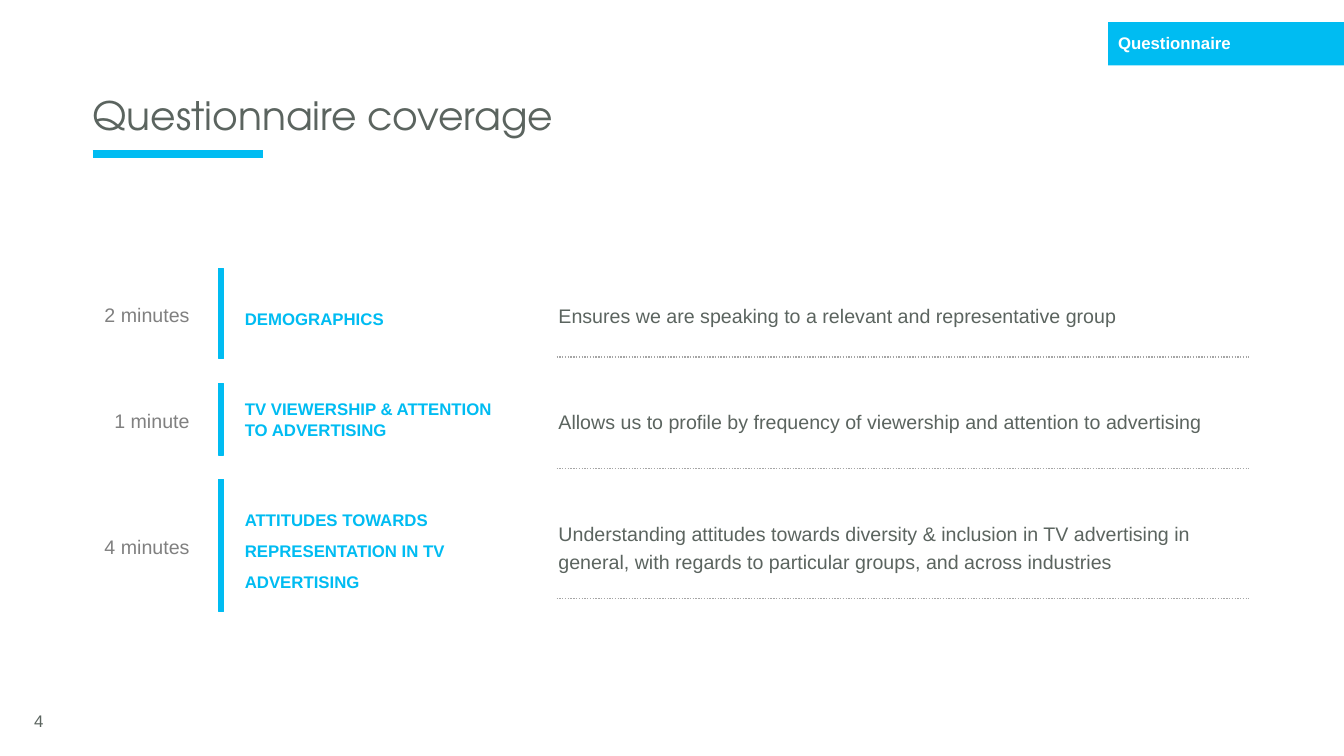
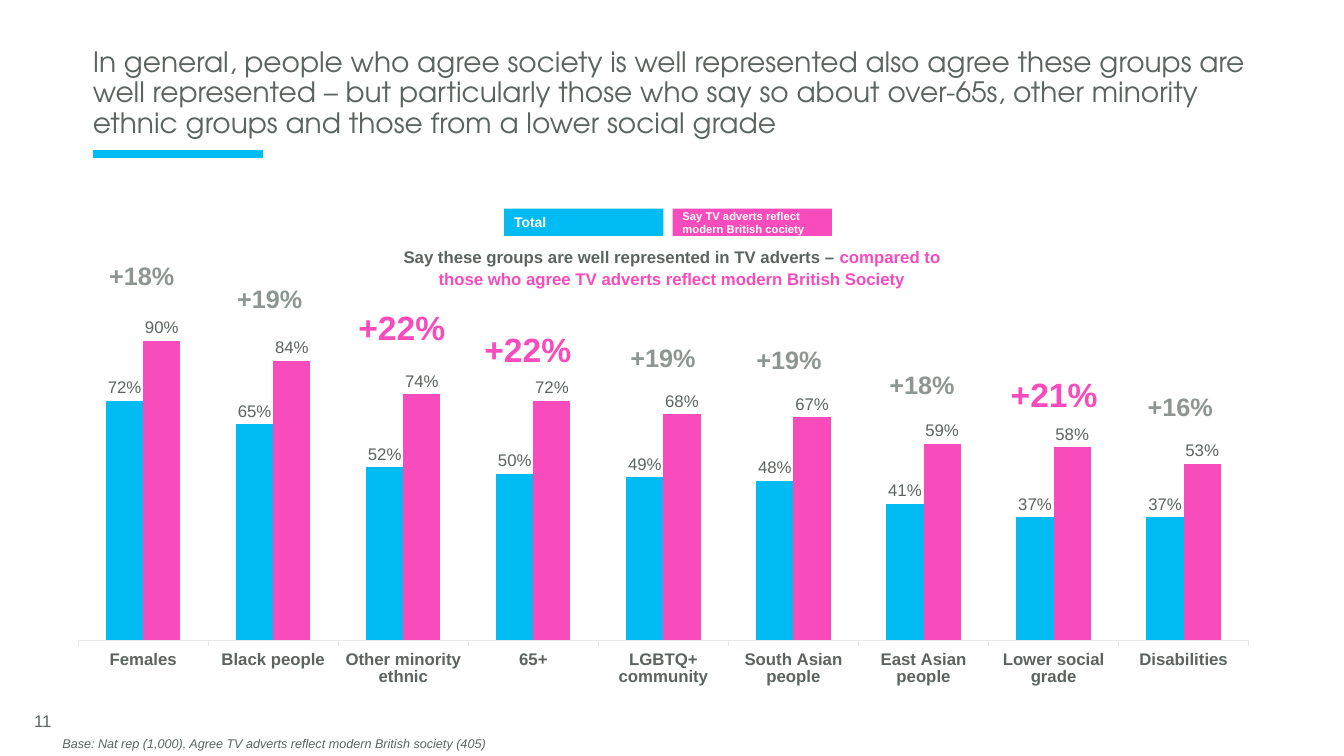
from lxml import etree
from pptx import Presentation
from pptx.chart.data import CategoryChartData
from pptx.dml.color import RGBColor
from pptx.enum.chart import XL_CHART_TYPE, XL_LABEL_POSITION, XL_TICK_LABEL_POSITION, XL_TICK_MARK
from pptx.enum.dml import MSO_LINE
from pptx.enum.shapes import MSO_CONNECTOR, MSO_SHAPE
from pptx.enum.text import MSO_ANCHOR, MSO_AUTO_SIZE, PP_ALIGN
from pptx.oxml.ns import qn
from pptx.util import Inches, Pt

RECTANGLE = MSO_SHAPE.RECTANGLE
STRAIGHT = MSO_CONNECTOR.STRAIGHT
DOTTED = MSO_LINE.ROUND_DOT
LEFT, CENTER, RIGHT = PP_ALIGN.LEFT, PP_ALIGN.CENTER, PP_ALIGN.RIGHT
MIDDLE, BOTTOM = MSO_ANCHOR.MIDDLE, MSO_ANCHOR.BOTTOM
NO_FIT = MSO_AUTO_SIZE.NONE
CLUSTERED = XL_CHART_TYPE.COLUMN_CLUSTERED
OUTSIDE_END = XL_LABEL_POSITION.OUTSIDE_END
LOW = XL_TICK_LABEL_POSITION.LOW
TICK_OUTSIDE = XL_TICK_MARK.OUTSIDE

BLUE, PINK, WHITE = "00BCF2", "F84CBC", "FFFFFF"
TEXT, TIME_GRAY, RULE_GRAY, DELTA_GRAY, AXIS_GRAY = "5B645F", "808080", "A6A6A6", "8D9691", "E6E8E7"
TITLE_FONT, BODY_FONT = "TeX Gyre Adventor", "Arial"


def color(value):
    return RGBColor.from_string(value)


def add_text(page, area, spans, size, bold=False, italic=False, align=LEFT, spacing=None, fill=None):
    area = [Inches(length) for length in area]
    if fill:
        box = page.shapes.add_shape(RECTANGLE, *area)
        box.shadow.inherit = False
        box.fill.solid()
        box.fill.fore_color.rgb = color(fill)
        box.line.fill.background()
    else:
        box = page.shapes.add_textbox(*area)
    frame = box.text_frame
    frame.word_wrap = True
    frame.vertical_anchor = MIDDLE
    para = frame.paragraphs[0]
    para.alignment = align
    para.line_spacing = spacing
    for words, tint in spans:
        span = para.add_run()
        span.text = words
        span.font.name = BODY_FONT
        span.font.size = Pt(size)
        span.font.bold = bold
        span.font.italic = italic
        span.font.color.rgb = color(tint)


deck = Presentation()
deck.slide_width, deck.slide_height = Inches(13.33), Inches(7.5)

titles = [
    ("Questionnaire coverage", 28, "4"),
    ("In general, people who agree society is well represented also agree these groups are "
     "well represented – but particularly those who say so about over-65s, other minority "
     "ethnic groups and those from a lower social grade", 20, "11"),
]
pages = []
rules = []
for heading, size, number in titles:
    page = deck.slides.add_slide(deck.slide_layouts[5])
    pages.append(page)
    title = page.shapes.title
    title.left, title.top = Inches(0.92), Inches(0.4)
    title.width, title.height = Inches(11.5), Inches(1.03)
    frame = title.text_frame
    frame.text = heading
    frame.word_wrap = True
    frame.auto_size = NO_FIT
    frame.vertical_anchor = BOTTOM
    frame.margin_left = frame.margin_right = 0
    para = frame.paragraphs[0]
    para.alignment = LEFT
    para.line_spacing = 0.9
    font = para.runs[0].font
    font.name, font.size = TITLE_FONT, Pt(size)
    font.color.rgb = color(TEXT)
    underline = page.shapes.add_connector(STRAIGHT, Inches(0.92), Inches(1.53), Inches(2.61), Inches(1.53))
    underline.line.color.rgb = color(BLUE)
    underline.line.width = Pt(6)
    rules.append(underline)
    add_text(page, (0.24, 6.95, 4.5, 0.4), [(number, TEXT)], 12)

coverage, comparison = pages

add_text(coverage, (10.99, 0.22, 2.35, 0.43), [("Questionnaire", WHITE)], 12, bold=True, spacing=0.9, fill=BLUE)

sections = [
    ("2 minutes", "DEMOGRAPHICS", Pt(22.1),
     "Ensures we are speaking to a relevant and representative group", 3.11, 0.89, 3.54),
    ("1 minute", "TV VIEWERSHIP & ATTENTION TO ADVERTISING", None,
     "Allows us to profile by frequency of viewership and attention to advertising", 4.16, 0.71, 4.65),
    ("4 minutes", "ATTITUDES TOWARDS REPRESENTATION IN TV ADVERTISING", Pt(22.1),
     "Understanding attitudes towards diversity & inclusion in TV advertising in general, "
     "with regards to particular groups, and across industries", 5.41, 1.31, 5.94),
]
for duration, topic, topic_spacing, purpose, middle, bar_height, rule_top in sections:
    add_text(coverage, (0.92, middle - 0.17, 1.06, 0.34), [(duration, TIME_GRAY)], 14,
             align=RIGHT, spacing=Pt(19.2))
    add_text(coverage, (2.33, middle - 0.4, 2.66, 0.8), [(topic, BLUE)], 12, bold=True, spacing=topic_spacing)
    add_text(coverage, (5.44, middle - 0.32, 6.85, 0.64), [(purpose, TEXT)], 14, spacing=1.2)
    bar = coverage.shapes.add_shape(RECTANGLE, Inches(2.17), Inches(middle - bar_height / 2),
                                    Inches(0.05), Inches(bar_height))
    bar.shadow.inherit = False
    bar.fill.solid()
    bar.fill.fore_color.rgb = color(BLUE)
    bar.line.color.rgb = color(BLUE)
    bar.line.width = Pt(1)
    divider = coverage.shapes.add_connector(STRAIGHT, Inches(5.52), Inches(rule_top), Inches(12.39), Inches(rule_top))
    divider.line.color.rgb = color(RULE_GRAY)
    divider.line.width = Pt(1)
    divider.line.dash_style = DOTTED
    rules.append(divider)

for rule in rules:
    etree.SubElement(rule.element.spPr, qn("a:effectLst"))

groups = ["Females", "Black people", "Other minority ethnic", "65+", "LGBTQ+ community",
          "South Asian people", "East Asian people", "Lower social grade", "Disabilities"]
total = [0.72, 0.65, 0.52, 0.5, 0.49, 0.48, 0.41, 0.37, 0.37]
agree = [0.9, 0.84, 0.74, 0.72, 0.68, 0.67, 0.59, 0.58, 0.53]
chart_data = CategoryChartData(number_format="0%")
chart_data.categories = groups
chart_data.add_series("Series 1", total)
chart_data.add_series("Series 2", agree)
chart = comparison.shapes.add_chart(CLUSTERED, Inches(0.77), Inches(2.76), Inches(11.62), Inches(4.18),
                                    chart_data).chart
chart.has_legend = False
chart.has_title = False
chart.font.name, chart.font.size = BODY_FONT, Pt(14)
chart.font.color.rgb = color(TEXT)

plot_area = chart.element.find(".//" + qn("c:plotArea"))
layout = plot_area.find(qn("c:layout"))
if layout is None:
    layout = etree.Element(qn("c:layout"))
    plot_area.insert(0, layout)
manual = etree.SubElement(layout, qn("c:manualLayout"))
for tag, value in [("layoutTarget", "inner"), ("xMode", "edge"), ("yMode", "edge"),
                   ("x", "0"), ("y", "0.07"), ("w", "1"), ("h", "0.79")]:
    etree.SubElement(manual, qn("c:" + tag)).set("val", value)

plot = chart.plots[0]
plot.gap_width, plot.overlap = 150, 0
plot.vary_by_categories = False
for series, tint in zip(plot.series, [BLUE, PINK]):
    series.format.fill.solid()
    series.format.fill.fore_color.rgb = color(tint)
    labels = series.data_labels
    labels.show_value = True
    labels.position = OUTSIDE_END
    labels.number_format, labels.number_format_is_linked = "0%", False
    labels.font.name, labels.font.size = BODY_FONT, Pt(12)
    labels.font.color.rgb = color(TEXT)

value_axis = chart.value_axis
value_axis.minimum_scale, value_axis.maximum_scale = 0, 1
value_axis.has_major_gridlines = False
value_axis.visible = False
category_axis = chart.category_axis
category_axis.major_tick_mark = TICK_OUTSIDE
category_axis.tick_label_position = LOW
category_axis.format.line.color.rgb = color(AXIS_GRAY)
category_axis.format.line.width = Pt(0.75)
axis_font = category_axis.tick_labels.font
axis_font.name, axis_font.size, axis_font.bold = BODY_FONT, Pt(12), True
axis_font.color.rgb = color(TEXT)

add_text(comparison, (5, 2.07, 1.58, 0.27), [("Total", WHITE)], 10, bold=True, fill=BLUE)
add_text(comparison, (6.67, 2.07, 1.58, 0.27), [("Say TV adverts reflect modern British cociety", WHITE)], 8,
         bold=True, fill=PINK)
add_text(comparison, (3.9, 2.38, 5.53, 0.53),
         [("Say these groups are well represented in TV adverts – ", TEXT),
          ("compared to those who agree TV adverts reflect modern British Society", PINK)],
         12, bold=True, align=CENTER, spacing=1.1)
add_text(comparison, (0.52, 7.26, 10.61, 0.24),
         [("Base: Nat rep (1,000), Agree TV adverts reflect modern British society (405)", TEXT)], 9, italic=True)

delta_corners = [(0.63, 2.51), (1.9, 2.74), (3.21, 2.97), (4.46, 3.19), (5.8, 3.33),
                 (7.05, 3.35), (8.37, 3.59), (9.68, 3.63), (10.93, 3.81)]
for (left, top), low, high in zip(delta_corners, total, agree):
    points = round((high - low) * 100)
    size, height, tint = (24, 0.51, PINK) if points > 20 else (18, 0.41, DELTA_GRAY)
    add_text(comparison, (left, top, 1.55, height), [(f"+{points}%", tint)], size,
             bold=True, align=CENTER, spacing=1.1)

deck.save("out.pptx")
